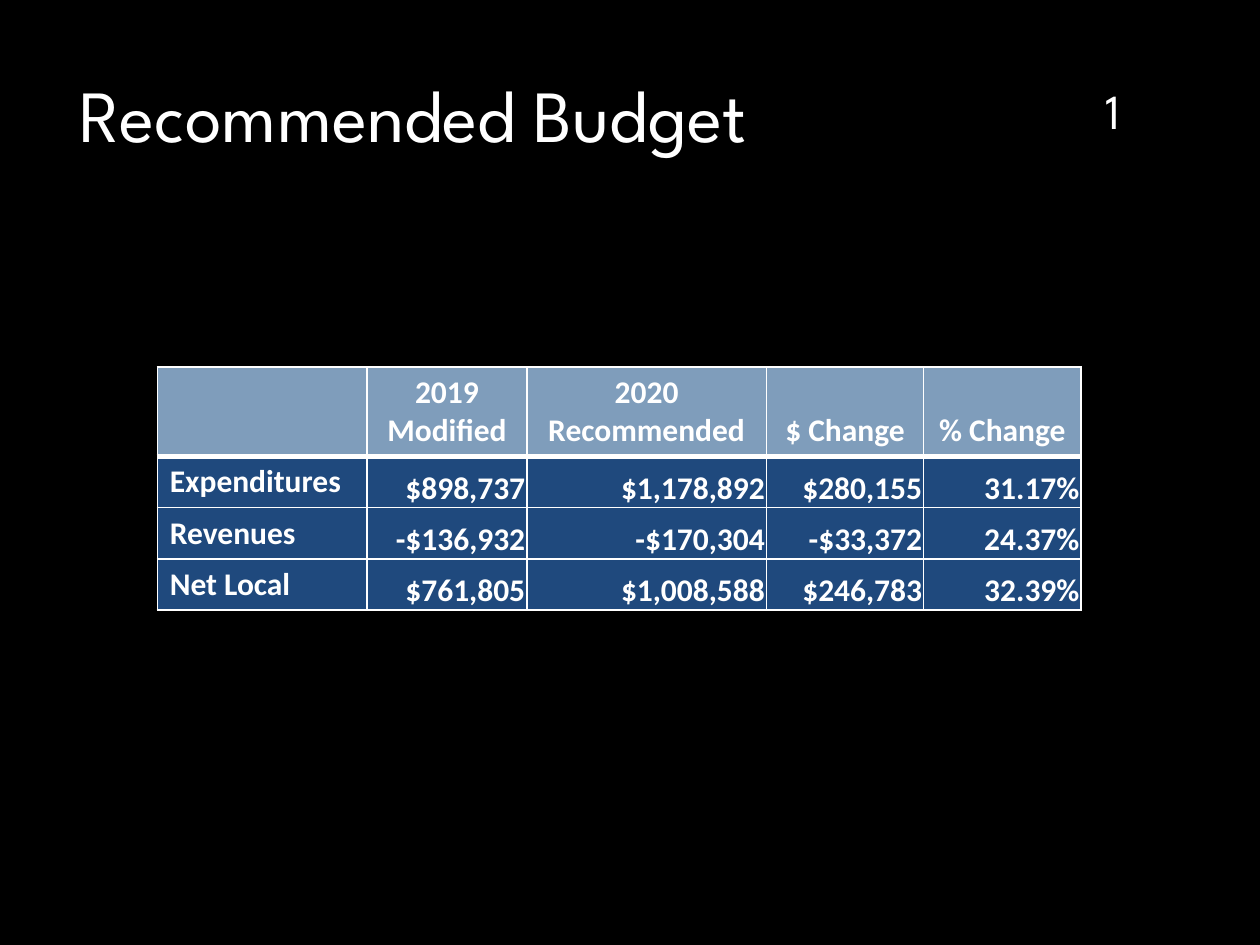
import dataclasses

import lxml.etree
import pptx
import pptx.dml.color
import pptx.enum.text
import pptx.oxml.ns
import pptx.util

Cm = pptx.util.Cm
Pt = pptx.util.Pt
ALIGN = pptx.enum.text.PP_ALIGN
ANCHOR = pptx.enum.text.MSO_ANCHOR


@dataclasses.dataclass(frozen=True)
class Theme:
    """Colours, fonts and type sizes of the slide."""
    background: str = "000000"
    text: str = "FFFFFF"
    header: str = "7F9DBB"
    body: str = "1F497D"
    display_font: str = "League Spartan"
    table_font: str = "Calibri"
    title_size: int = 42
    number_size: int = 28
    table_size: int = 18
    rule: int = 1
    header_rule: int = 3


THEME = Theme()
COLUMN_WIDTHS = (4.23, 3.22, 4.83, 3.17, 3.17)
ROW_HEIGHTS = (1.7, 1.03, 1.03, 1.03)
BUDGET = (
    ("", "2019\nModified", "2020\nRecommended", "$ Change", "% Change"),
    ("Expenditures", "$898,737", "$1,178,892", "$280,155", "31.17%"),
    ("Revenues", "-$136,932", "-$170,304", "-$33,372", "24.37%"),
    ("Net Local", "$761,805", "$1,008,588", "$246,783", "32.39%"),
)


def rgb(value):
    """Return a colour object for a hex value."""
    return pptx.dml.color.RGBColor.from_string(value)


def write(frame, text, font, size, align, bold=False):
    """Write each line of text as a formatted paragraph."""
    for index, line in enumerate(text.split("\n")):
        paragraph = frame.add_paragraph() if index else frame.paragraphs[0]
        paragraph.alignment = align
        paragraph.font.size = Pt(size)
        if line:
            run = paragraph.add_run()
            run.text = line
            run.font.name = font
            run.font.size = Pt(size)
            run.font.bold = bold
            run.font.color.rgb = rgb(THEME.text)


def add_title(slide, text):
    """Fill and place the title placeholder."""
    title = slide.shapes.title
    title.left, title.top, title.width, title.height = (
        Cm(1.35), Cm(1.27), Cm(19.61), Cm(3.89))
    frame = title.text_frame
    frame.auto_size = pptx.enum.text.MSO_AUTO_SIZE.NONE
    frame.vertical_anchor = ANCHOR.TOP
    write(frame, text, THEME.display_font, THEME.title_size, ALIGN.LEFT)


def add_page_number(slide, text):
    """Add the page number at the upper right."""
    number = slide.shapes.add_textbox(Cm(21.56), Cm(0.81), Cm(1.75), Cm(2.13))
    frame = number.text_frame
    frame.word_wrap = True
    frame.vertical_anchor = ANCHOR.BOTTOM
    write(frame, text, THEME.display_font, THEME.number_size, ALIGN.CENTER)


def set_borders(cell, top, bottom):
    """Draw the four cell borders, with the given top and bottom weights."""
    properties = cell._tc.get_or_add_tcPr()
    weights = {"a:lnL": THEME.rule, "a:lnR": THEME.rule, "a:lnT": top, "a:lnB": bottom}
    for index, (tag, weight) in enumerate(weights.items()):
        line = lxml.etree.Element(pptx.oxml.ns.qn(tag), w=str(Pt(weight)))
        fill = lxml.etree.SubElement(line, pptx.oxml.ns.qn("a:solidFill"))
        lxml.etree.SubElement(fill, pptx.oxml.ns.qn("a:srgbClr"), val=THEME.text)
        properties.insert(index, line)


def format_cell(cell, text, row, column):
    """Style a cell as a header, a row label or an amount."""
    is_header, is_label = row == 0, column == 0
    cell.fill.solid()
    cell.fill.fore_color.rgb = rgb(THEME.header if is_header else THEME.body)
    cell.vertical_anchor = ANCHOR.TOP if is_label else ANCHOR.BOTTOM
    if is_header:
        align = ALIGN.CENTER
    elif is_label:
        align = ALIGN.LEFT
    else:
        align = ALIGN.RIGHT
        cell.margin_left = cell.margin_top = cell.margin_right = Cm(0.03)
        cell.margin_bottom = 0
    write(cell.text_frame, text, THEME.table_font, THEME.table_size, align, bold=True)
    set_borders(cell,
                THEME.header_rule if row == 1 else THEME.rule,
                THEME.header_rule if is_header else THEME.rule)


def add_budget_table(slide):
    """Add the budget comparison table."""
    budget = slide.shapes.add_table(
        len(BUDGET), len(COLUMN_WIDTHS), Cm(3.17), Cm(7.4),
        Cm(sum(COLUMN_WIDTHS)), Cm(sum(ROW_HEIGHTS))).table
    for column, width in zip(budget.columns, COLUMN_WIDTHS):
        column.width = Cm(width)
    for row, height in zip(budget.rows, ROW_HEIGHTS):
        row.height = Cm(height)
    for row, texts in enumerate(BUDGET):
        for column, text in enumerate(texts):
            format_cell(budget.cell(row, column), text, row, column)


def main():
    """Build and save the slide."""
    presentation = pptx.Presentation()
    presentation.slide_width, presentation.slide_height = Cm(25.4), Cm(19.05)
    slide = presentation.slides.add_slide(presentation.slide_layouts[5])
    slide.background.fill.solid()
    slide.background.fill.fore_color.rgb = rgb(THEME.background)
    add_title(slide, "Recommended Budget")
    add_budget_table(slide)
    add_page_number(slide, "1")
    presentation.save("out.pptx")


if __name__ == "__main__":
    main()
